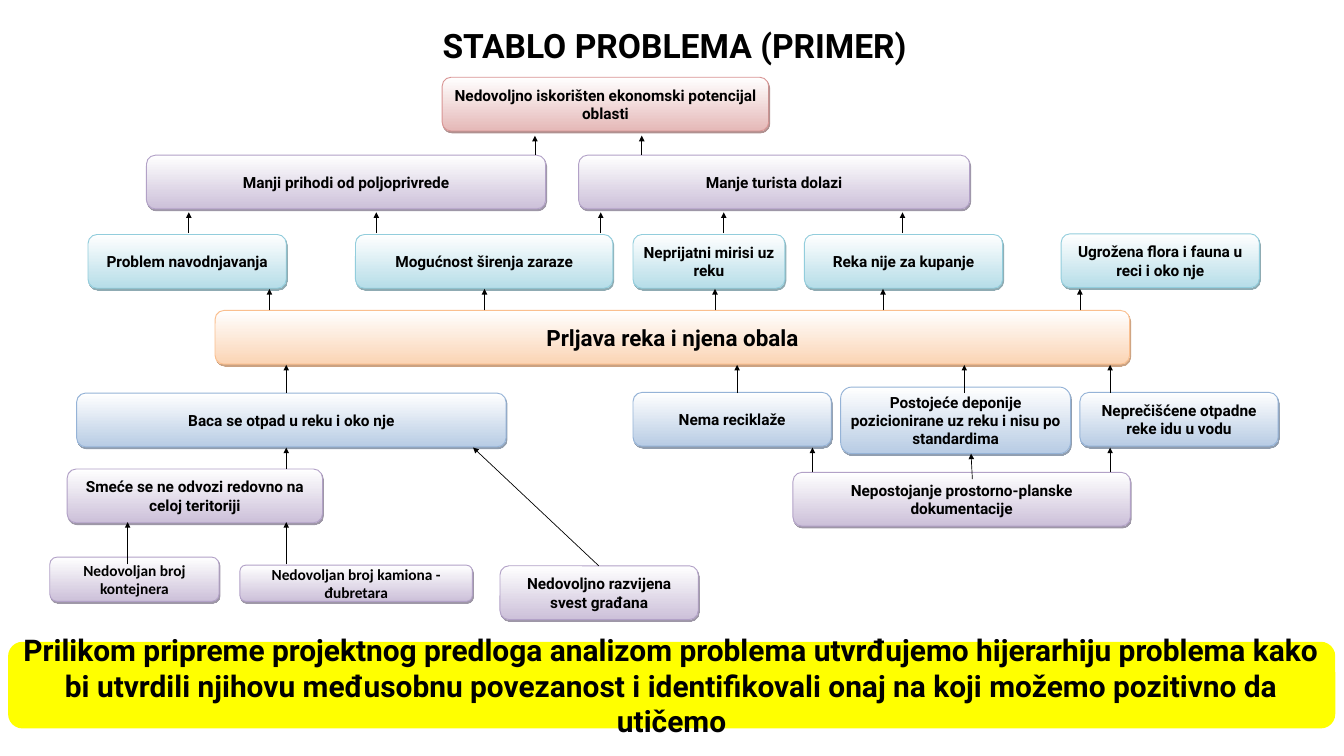
from lxml.etree import SubElement
from pptx import Presentation
from pptx.dml.color import RGBColor
from pptx.enum.shapes import MSO_CONNECTOR, MSO_SHAPE
from pptx.enum.text import MSO_ANCHOR, PP_ALIGN
from pptx.oxml.ns import qn
from pptx.util import Pt

PX = 9144  # EMU per px, 100 px to the inch

COLOURS = {"text": "000000", "white": "FFFFFF", "note": "FFFF00"}
# Each level of the tree: gradient end, outline, shadow
LEVELS = {
    "red": ("E5B8B7", "D99594", "622423"),
    "purple": ("CCC0D9", "B2A1C7", "3F3151"),
    "teal": ("B6DDE8", "92CDDC", "205867"),
    "orange": ("FBD4B4", "FABF8F", "974706"),
    "blue": ("B8CCE4", "95B3D7", "243F60"),
}


def rgb(colour):
    return RGBColor.from_string(colour)


def write(shape, text, size=16.5, font="Roboto", anchor=MSO_ANCHOR.MIDDLE):
    frame = shape.text_frame
    frame.word_wrap = True
    frame.vertical_anchor = anchor
    paragraph = frame.paragraphs[0]
    paragraph.alignment = PP_ALIGN.CENTER
    run = paragraph.add_run()
    run.text = text
    run.font.size = Pt(size)
    run.font.name = font
    run.font.bold = True
    run.font.color.rgb = rgb(COLOURS["text"])


class ProblemTree:
    def __init__(self, slide):
        self.shapes = slide.shapes

    def rounded(self, left, top, width, height):
        shape = self.shapes.add_shape(
            MSO_SHAPE.ROUNDED_RECTANGLE, left * PX, top * PX, width * PX, height * PX)
        shape.shadow.inherit = False
        return shape

    def box(self, level, text, left, top, width, height=80, **style):
        end, outline, shade = LEVELS[level]
        shape = self.rounded(left, top, width, height)
        shape.fill.gradient()
        shape.fill.gradient_angle = 270  # white at the top
        for stop, colour in zip(shape.fill.gradient_stops, (COLOURS["white"], end)):
            stop.color.rgb = rgb(colour)
        shape.line.color.rgb = rgb(outline)
        shape.line.width = Pt(1)
        self.cast_shadow(shape, shade)
        write(shape, text, **style)

    def cast_shadow(self, shape, colour):
        effects = shape._element.spPr.find(qn("a:effectLst"))
        shadow = SubElement(effects, qn("a:outerShdw"), blurRad="0", dist=str(Pt(2.2)),
                            dir=str(63 * 60000), algn="ctr", rotWithShape="0")
        tint = SubElement(shadow, qn("a:srgbClr"), val=colour)
        SubElement(tint, qn("a:alpha"), val="50000")

    def arrow(self, x1, y1, x2, y2):
        arrow = self.shapes.add_connector(
            MSO_CONNECTOR.STRAIGHT, x1 * PX, y1 * PX, x2 * PX, y2 * PX)
        arrow.line.color.rgb = rgb(COLOURS["text"])
        arrow.line.width = Pt(0.75)
        SubElement(arrow.line._get_or_add_ln(), qn("a:tailEnd"), type="triangle")
        SubElement(arrow._element.spPr, qn("a:effectLst"))

    def note(self, text, left, top, width, height):
        shape = self.rounded(left, top, width, height)
        shape.fill.solid()
        shape.fill.fore_color.rgb = rgb(COLOURS["note"])
        shape.line.fill.background()
        write(shape, text, size=32)

    def title(self, text, left, top, width, height):
        box = self.shapes.add_textbox(left * PX, top * PX, width * PX, height * PX)
        write(box, text, size=36, anchor=MSO_ANCHOR.TOP)


BOXES = [
    # Effects
    ("red", "Nedovoljno iskorišten ekonomski potencijal oblasti", 658, 115, 486),
    ("purple", "Manji prihodi od poljoprivrede", 218, 231, 594),
    ("purple", "Manje turista dolazi", 861, 231, 582),
    ("teal", "Problem navodnjavanja", 131, 349, 295),
    ("teal", "Mogućnost širenja zaraze", 529, 349, 383),
    ("teal", "Neprijatni mirisi uz reku", 942, 349, 226),
    ("teal", "Reka nije za kupanje", 1197, 349, 295),
    ("teal", "Ugrožena flora i fauna u reci i oko nje", 1579, 348, 295),
    # Causes
    ("blue", "Baca se otpad u reku i oko nje", 114, 585, 639),
    ("blue", "Nema reciklaže", 942, 584, 295),
    ("blue", "Postojeće deponije pozicionirane uz reku i nisu po standardima",
     1251, 576, 342, 99),
    ("blue", "Neprečišćene otpadne reke idu u vodu", 1607, 584, 295),
    ("purple", "Smeće se ne odvozi redovno na celoj teritoriji", 100, 698, 380),
    ("purple", "Nepostojanje prostorno-planske dokumentacije", 1180, 703, 502),
    ("purple", "Nedovoljno razvijena svest građana", 744, 842, 295),
]

# Upright arrows: start y, end y, and the x of each
ARROW_ROWS = [
    (231, 202, (796, 955)),
    (347, 316, (281, 560, 894, 1077, 1343)),
    (462, 430, (401, 721, 1064, 1314, 1607)),
    (585, 543, (426, 1097, 1435, 1652)),
    (698, 666, (426,)),
    (703, 666, (1209, 1652)),
    (840, 777, (190, 426)),
]


def main():
    deck = Presentation()
    deck.slide_width, deck.slide_height = 2000 * PX, 1125 * PX
    tree = ProblemTree(deck.slides.add_slide(deck.slide_layouts[6]))

    # Boxes of the tree
    for box in BOXES:
        tree.box(*box)
    tree.box("orange", "Prljava reka i njena obala", 320, 462, 1361, size=24)
    tree.box("purple", "Nedovoljan broj kontejnera", 74, 829, 252, 66, font="Calibri")
    tree.box("purple", "Nedovoljan broj kamiona - đubretara", 357, 841, 346, 54,
             font="Calibri")

    # Arrows from cause to effect
    for start, end, columns in ARROW_ROWS:
        for x in columns:
            tree.arrow(x, start, x, end)
    tree.arrow(1447, 713, 1445, 675)
    tree.arrow(891, 842, 704, 666)

    # Note and title
    tree.note("Prilikom pripreme projektnog predloga analizom problema utvrđujemo "
              "hijerarhiju problema kako bi utvrdili njihovu međusobnu povezanost i "
              "identifikovali onaj na koji možemo pozitivno da utičemo",
              12, 955, 1975, 129)
    tree.title("STABLO PROBLEMA (PRIMER)", 4, 32, 2000, 71)

    deck.save("out.pptx")


if __name__ == "__main__":
    main()
